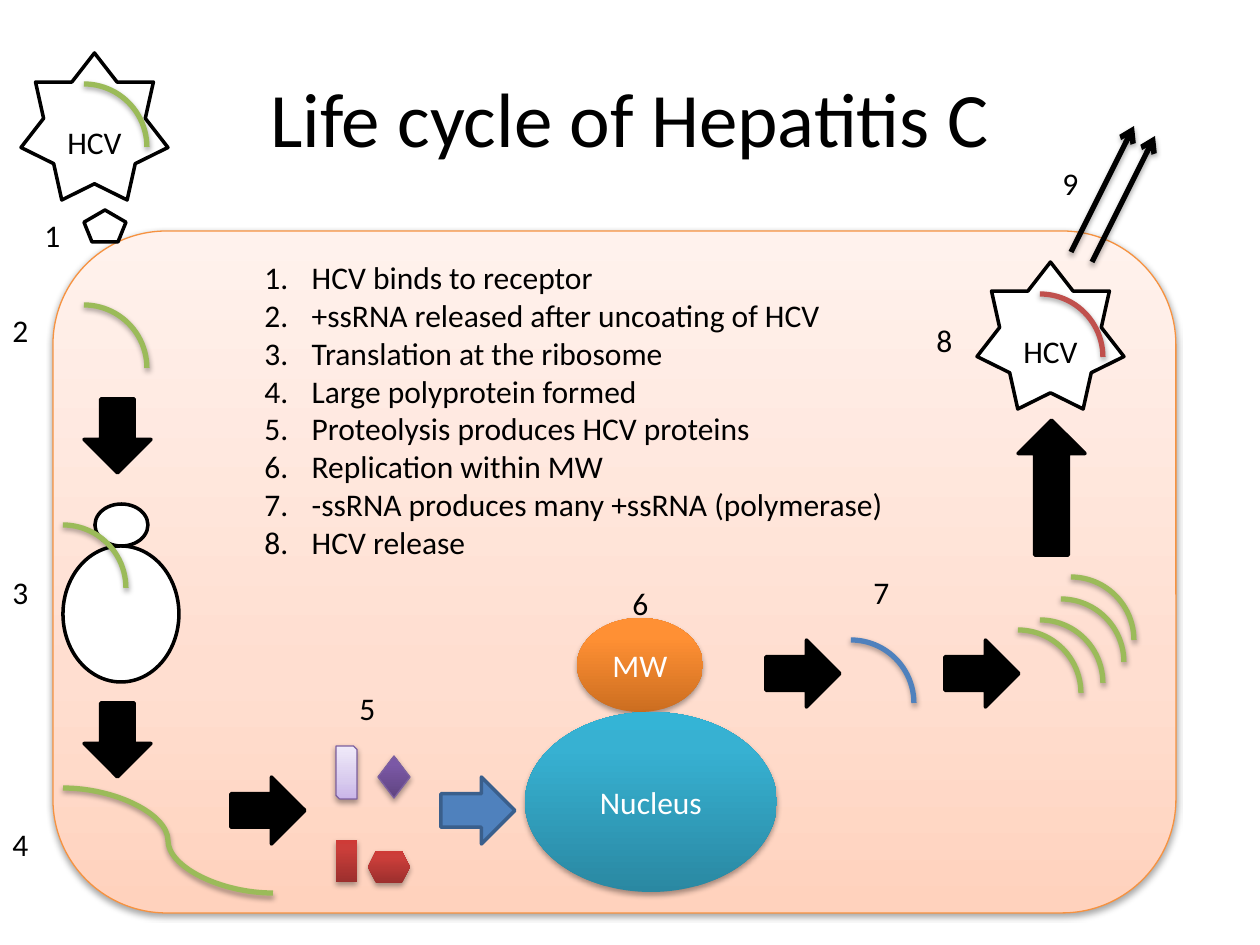
import pptx
import pptx.util
import pptx.dml.color
import pptx.enum.shapes
import pptx.enum.text
import pptx.oxml
import pptx.oxml.ns
import lxml.etree

SHAPE = pptx.enum.shapes.MSO_SHAPE
CONNECTOR = pptx.enum.shapes.MSO_CONNECTOR
ALIGN = pptx.enum.text.PP_ALIGN
ANCHOR = pptx.enum.text.MSO_ANCHOR
qn = pptx.oxml.ns.qn

SCALE = 914400 / 126
BLACK, WHITE = "000000", "FFFFFF"
GREEN, RED, BLUE = "9BBB59", "C0504D", "4F81BD"

TITLE = "Life cycle of Hepatitis C"
STEPS = [
    "HCV binds to receptor",
    "+ssRNA released after uncoating of HCV",
    "Translation at the ribosome",
    "Large polyprotein formed",
    "Proteolysis produces HCV proteins",
    "Replication within MW",
    "-ssRNA produces many +ssRNA (polymerase)",
    "HCV release",
]
LABELS = [(32, 210), (0, 305), (0, 567), (0, 819), (347, 683),
          (620, 578), (861, 567), (924, 315), (1050, 158)]

CELL = [(0, "FFD2BD"), (35, "FFDED0"), (100, "FFF2ED")]
LILAC = [(0, "C9B5E8"), (35, "D8CBEE"), (100, "F0EAF9")]
PURPLE = [(0, "5F4480"), (80, "7B58A6"), (100, "7C57A8")]
CRIMSON = [(0, "9C2F2D"), (80, "CB3E3A"), (100, "CE3B37")]
ORANGE = [(0, "CC6E20"), (80, "FF9034"), (100, "FF9136")]
TEAL = [(0, "2A88A2"), (80, "37B1D2"), (100, "34B4D6")]

OUTLINED = dict(fill=WHITE, line=BLACK)
SOLID = dict(fill=BLACK, line=BLACK)
VIRUS = dict(OUTLINED, text="HCV", color=BLACK, drop=38)


def strand(left, top, color=GREEN):
    return SHAPE.ARC, (left, top, 126, 126), dict(line=color, width=3, shadow=True)


SHAPES = [
    (SHAPE.ROUNDED_RECTANGLE, (53, 231, 1123, 682),
     dict(fill=CELL, line="F69240", width=0.75, shadow=True)),
    (SHAPE.STAR_7_POINT, (21, 53, 147, 147), VIRUS),
    strand(21, 84),
    (SHAPE.REGULAR_PENTAGON, (84, 210, 42, 32), OUTLINED),
    strand(21, 305),
    (SHAPE.OVAL, (95, 504, 53, 42), OUTLINED),
    (SHAPE.OVAL, (63, 546, 116, 136), OUTLINED),
    (SHAPE.DOWN_ARROW, (84, 399, 67, 74), SOLID),
    strand(0, 525),
    (SHAPE.DOWN_ARROW, (84, 703, 67, 74), SOLID),
    (SHAPE.RIGHT_ARROW, (231, 777, 74, 67), SOLID),
    (SHAPE.SNIP_2_DIAG_RECTANGLE, (336, 746, 21, 53),
     dict(fill=LILAC, line="7D60A0", width=0.75, shadow=True)),
    (SHAPE.DIAMOND, (378, 756, 32, 42),
     dict(fill=PURPLE, line="7D60A0", width=0.75, shadow=True)),
    (SHAPE.RECTANGLE, (336, 840, 21, 42), dict(fill=CRIMSON, shadow=True)),
    (SHAPE.HEXAGON, (368, 851, 42, 32), dict(fill=CRIMSON, shadow=True)),
    (SHAPE.RIGHT_ARROW, (441, 777, 74, 67), dict(fill=BLUE, line="3A5F8C")),
    (SHAPE.OVAL, (577, 618, 126, 94), dict(fill=ORANGE, shadow=True, text="MW")),
    (SHAPE.OVAL, (525, 712, 252, 180), dict(fill=TEAL, shadow=True, text="Nucleus")),
    strand(788, 640, BLUE),
    (SHAPE.RIGHT_ARROW, (945, 640, 74, 67), SOLID),
    (SHAPE.RIGHT_ARROW, (766, 640, 74, 67), SOLID),
    strand(1008, 577), strand(998, 599), strand(977, 620), strand(955, 630),
    (SHAPE.UP_ARROW, (1018, 420, 67, 135), SOLID),
    (SHAPE.STAR_7_POINT, (977, 262, 147, 147), VIRUS),
    strand(977, 294, RED),
]
LINES = [
    (CONNECTOR.CURVE, (63, 788, 273, 893), GREEN, False),
    (CONNECTOR.STRAIGHT, (1071, 252, 1134, 126), BLACK, True),
    (CONNECTOR.STRAIGHT, (1092, 262, 1155, 136), BLACK, True),
]


def px(*lengths):
    return [pptx.util.Emu(round(length * SCALE)) for length in lengths]


def rgb(color):
    return pptx.dml.color.RGBColor.from_string(color)


def set_line(line, color, width):
    line.color.rgb = rgb(color)
    line.width = pptx.util.Pt(width)


def add_color(parent, color):
    return lxml.etree.SubElement(parent, qn("a:srgbClr"), val=color)


def set_gradient(shape, stops):
    shape.fill.gradient()
    shape.fill.gradient_angle = 90
    stop_list = shape._element.spPr.find(".//" + qn("a:gsLst"))
    for old_stop in list(stop_list):
        stop_list.remove(old_stop)
    for position, color in stops:
        stop = lxml.etree.SubElement(stop_list, qn("a:gs"), pos=str(position * 1000))
        add_color(stop, color)


def add_shadow(effects):
    shadow = lxml.etree.SubElement(effects, qn("a:outerShdw"), blurRad="40000",
                                   dist="23000", dir="5400000", rotWithShape="0")
    lxml.etree.SubElement(add_color(shadow, BLACK), qn("a:alpha"), val="35000")


def write(frame, text, size=18, color=BLACK, align=ALIGN.LEFT, anchor=ANCHOR.TOP,
          wrap=True, numbered=False):
    frame.word_wrap = wrap
    frame.vertical_anchor = anchor
    for index, words in enumerate(text.split("\n")):
        para = frame.paragraphs[0] if index == 0 else frame.add_paragraph()
        para.alignment = align
        span = para.add_run()
        span.text = words
        span.font.name = "Calibri"
        span.font.size = pptx.util.Pt(size)
        span.font.color.rgb = rgb(color)
        if numbered:
            properties = para._p.get_or_add_pPr()
            properties.set("marL", "342900")
            properties.set("indent", "-342900")
            lxml.etree.SubElement(properties, qn("a:buFont"), typeface="+mj-lt")
            lxml.etree.SubElement(properties, qn("a:buAutoNum"), type="arabicPeriod")


def add_text(page, bounds, text, **style):
    box = page.shapes.add_textbox(*px(*bounds))
    write(box.text_frame, text, **style)


def draw_shape(page, kind, bounds, fill=None, line=None, width=2, shadow=False,
               text="", color=WHITE, drop=0):
    shape = page.shapes.add_shape(kind, *px(*bounds))
    shape.shadow.inherit = False
    if isinstance(fill, list):
        set_gradient(shape, fill)
    elif fill:
        shape.fill.solid()
        shape.fill.fore_color.rgb = rgb(fill)
    else:
        shape.fill.background()
    if line:
        set_line(shape.line, line, width)
    else:
        shape.line.fill.background()
    if shadow:
        add_shadow(shape._element.spPr.find(qn("a:effectLst")))
    if text:
        shape.text_frame.margin_top += px(drop)[0]
        write(shape.text_frame, text, color=color, align=ALIGN.CENTER,
              anchor=ANCHOR.MIDDLE)


def draw_line(page, kind, ends, color, arrow):
    connector = page.shapes.add_connector(kind, *px(*ends))
    set_line(connector.line, color, 3)
    properties = connector._element.spPr
    if arrow:
        lxml.etree.SubElement(properties.find(qn("a:ln")), qn("a:tailEnd"), type="arrow")
    add_shadow(lxml.etree.SubElement(properties, qn("a:effectLst")))


def main():
    deck = pptx.Presentation()
    deck.slide_width, deck.slide_height = px(1260, 945)
    page = deck.slides.add_slide(deck.slide_layouts[6])
    add_text(page, (63, 38, 1134, 158), TITLE, size=44, align=ALIGN.CENTER,
             anchor=ANCHOR.MIDDLE)
    for kind, bounds, style in SHAPES:
        draw_shape(page, kind, bounds, **style)
    for kind, ends, color, arrow in LINES:
        draw_line(page, kind, ends, color, arrow)
    for number, (left, top) in enumerate(LABELS, 1):
        add_text(page, (left, top, 42, 50), str(number), wrap=False)
    add_text(page, (252, 252, 672, 318), "\n".join(STEPS), numbered=True)
    deck.save("out.pptx")


if __name__ == "__main__":
    main()
